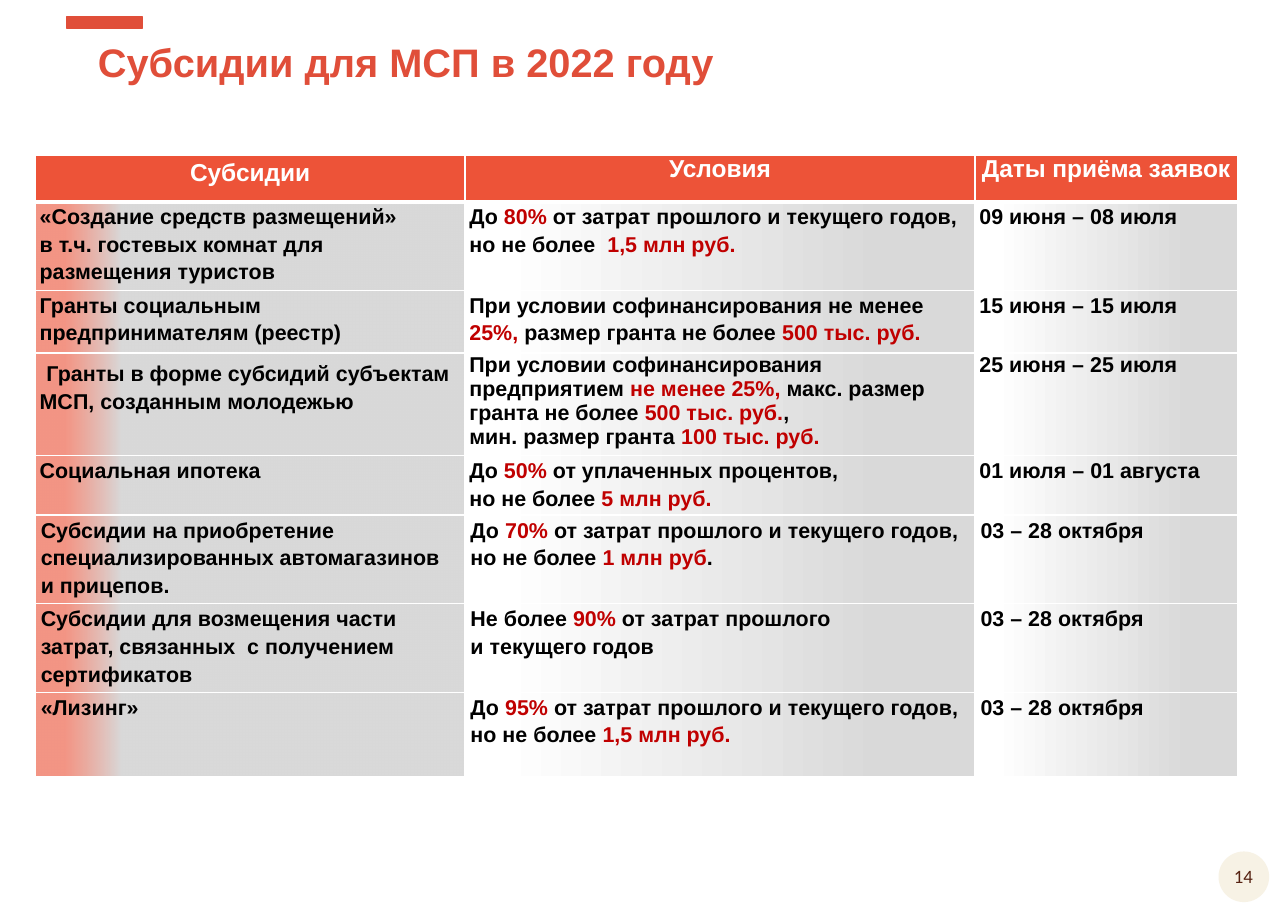
from lxml import etree
from pptx import Presentation, util as u
from pptx.dml.color import RGBColor
from pptx.enum import shapes, text
from pptx.oxml.ns import qn

ACCENT, HEADER, RED = "E04E39", "ED5338", "C00000"
BLACK, WHITE, GREY = "000000", "FFFFFF", "D9D9D9"

# Gradient stops: position in percent, colour, opacity in percent
NAME_STOPS = [(0, GREY, 100), (80, GREY, 100), (93, "F28572", 86)]
PLAIN_STOPS = [(0, GREY, 100), (18, GREY, 100), (93, WHITE, 100)]

COLUMNS = [3.9, 4.63, 2.38, 0.14]
HEADINGS = ["Субсидии", "Условия", "Даты приёма заявок"]
# Height, side margin, line spacing, cells.
# *red words*, \n is a new paragraph, \v is a line break
SUBSIDIES = [
    (0.77, 0.04, 1.15,
     ["«Создание средств размещений»\nв т.ч. гостевых комнат для размещения туристов",
      "До *80%* от затрат прошлого и текущего годов, \vно не более  *1,5 млн руб.*",
      "09 июня – 08 июля"]),
    (0.57, 0.04, 1.15,
     ["Гранты социальным предпринимателям (реестр)",
      "При условии софинансирования не менее *25%, *размер гранта не более *500 тыс. руб.*",
      "15 июня – 15 июля"]),
    (0.88, 0.04, 1.0,
     ["\u00a0Гранты в форме субсидий субъектам МСП, созданным молодежью",
      "При условии софинансирования предприятием *не менее 25%, *макс. размер гранта "
      "не более *500 тыс. руб.*, \vмин. размер гранта *100 тыс. руб.*",
      "25 июня – 25 июля"]),
    (0.49, 0.04, 1.15,
     ["Социальная ипотека",
      "До *50%* от уплаченных процентов, \vно не более *5 млн руб.*",
      "01 июля – 01 августа"]),
    (0.8, 0.05, 1.15,
     ["Субсидии на приобретение специализированных автомагазинов \vи прицепов.",
      "До *70%* от затрат прошлого и текущего годов, но не более *1 млн руб*.",
      "03 – 28 октября"]),
    (0.77, 0.05, 1.15,
     ["Субсидии для возмещения части затрат, связанных  с получением сертификатов",
      "Не более *90% *от затрат прошлого \vи текущего годов",
      "03 – 28 октября"]),
    (0.77, 0.05, 1.15,
     ["«Лизинг»",
      "До *95%* от затрат прошлого и текущего годов, но не более *1,5 млн руб.*",
      "03 – 28 октября"]),
]


def colour(value):
    return RGBColor.from_string(value)


def inches(*values):
    return [u.Inches(value) for value in values]


def add_span(para, words, size, ink, bold=True, name="Arial"):
    span = para.add_run()
    span.text = words
    for key, value in {"size": u.Pt(size), "bold": bold, "name": name}.items():
        setattr(span.font, key, value)
    span.font.color.rgb = colour(ink)


def add_marked_text(para, words, size, ink):
    if words.startswith("\u00a0"):
        add_span(para, "\u00a0", 19.8, WHITE, False, "Calibri")
        words = words[1:]
    for index, part in enumerate(words.split("*")):
        for number, line in enumerate(part.split("\v")):
            if number:
                para.add_line_break()
            if line:
                add_span(para, line, size, RED if index % 2 else ink)


def fill_cell_text(cell, words, size, ink, spacing, margin, align):
    margins = {"margin_left": margin, "margin_right": margin,
               "margin_top": 0, "margin_bottom": 0}
    for key, value in margins.items():
        setattr(cell, key, u.Inches(value))
    frame = cell.text_frame
    for index, line in enumerate(words.split("\n")):
        para = frame.add_paragraph() if index else frame.paragraphs[0]
        para.alignment, para.line_spacing = align, spacing
        add_marked_text(para, line, size, ink)


def add_child(parent, tag, **attributes):
    return etree.SubElement(parent, qn(tag), attributes)


def set_gradient(cell, stops):
    gradient = add_child(cell._tc.get_or_add_tcPr(), "a:gradFill", rotWithShape="1")
    stop_list = add_child(gradient, "a:gsLst")
    for position, value, opacity in stops:
        stop = add_child(stop_list, "a:gs", pos=str(position * 1000))
        ink = add_child(stop, "a:srgbClr", val=value)
        if opacity < 100:
            add_child(ink, "a:alpha", val=str(opacity * 1000))
    add_child(gradient, "a:lin", ang=str(180 * 60000), scaled="0")


def set_fill(cell, value):
    cell.fill.solid()
    cell.fill.fore_color.rgb = colour(value)


def set_borders(cell, top, bottom):
    properties = cell._tc.get_or_add_tcPr()
    widths = {"a:lnL": 1, "a:lnR": 1, "a:lnT": top, "a:lnB": bottom}
    for index, (tag, width) in enumerate(widths.items()):
        line = etree.Element(qn(tag), w=str(u.Pt(width)))
        add_child(add_child(line, "a:solidFill"), "a:srgbClr", val=WHITE)
        properties.insert(index, line)


def add_plain_shape(page, kind, box, fill):
    shape = page.shapes.add_shape(kind, *inches(*box))
    shape.shadow.inherit = False
    shape.fill.solid()
    shape.fill.fore_color.rgb = colour(fill)
    shape.line.fill.background()
    return shape


def add_label(page, box, words, align, spacing, **style):
    frame = page.shapes.add_textbox(*inches(*box)).text_frame
    frame.word_wrap = True
    frame.vertical_anchor = text.MSO_ANCHOR.TOP
    para = frame.paragraphs[0]
    para.alignment, para.line_spacing = align, spacing
    add_span(para, words, **style)


def add_title(page, left, top, width):
    bar = add_plain_shape(page, shapes.MSO_SHAPE.RECTANGLE, (left, top, 0.68, 0.11), ACCENT)
    bar.line.color.rgb = colour(ACCENT)
    bar.line.width = u.Pt(1)
    add_label(page, (left + 0.18, top + 0.21, width - 0.18, 0.47),
              "Субсидии для МСП в 2022 году", text.PP_ALIGN.LEFT, 0.85, size=26, ink=ACCENT)


def add_subsidy_table(page, left, top):
    heights = [0.42] + [row[0] for row in SUBSIDIES]
    box = inches(left, top, sum(COLUMNS), sum(heights))
    table = page.shapes.add_table(len(heights), len(COLUMNS), *box).table
    table.first_row = table.horz_banding = False
    for column, width in zip(table.columns, COLUMNS):
        column.width = u.Inches(width)
    for row, height in zip(table.rows, heights):
        row.height = u.Inches(height)

    # Heading row
    for index, heading in enumerate(HEADINGS):
        cell = table.cell(0, index)
        fill_cell_text(cell, heading, 16, WHITE, 1.0 if index else 1.15, 0.05,
                       text.PP_ALIGN.CENTER)
        set_fill(cell, HEADER)

    # Subsidy rows
    for number, (_, margin, spacing, cells) in enumerate(SUBSIDIES, 1):
        for index, words in enumerate(cells):
            cell = table.cell(number, index)
            fill_cell_text(cell, words, 14, BLACK, spacing, margin, text.PP_ALIGN.LEFT)
            set_gradient(cell, PLAIN_STOPS if index else NAME_STOPS)

    # White end column and borders
    last = len(COLUMNS) - 1
    for number in range(len(heights)):
        set_fill(table.cell(number, last), WHITE)
        for index in range(len(COLUMNS)):
            set_borders(table.cell(number, index), 3 if number == 1 else 1,
                        1 if number else 3)
    table.cell(0, last).merge(table.cell(len(heights) - 2, last))


def add_page_number(page, left, top, size):
    add_plain_shape(page, shapes.MSO_SHAPE.OVAL, (left, top, size, size), "F7F2E5")
    add_label(page, (left - 0.03, top + 0.07, size + 0.05, 0.3), "14",
              text.PP_ALIGN.CENTER, 1.0, size=12.3, ink="562212", bold=False, name="Calibri")


def main():
    deck = Presentation()
    deck.slide_width, deck.slide_height = inches(11.69, 8.27)
    page = deck.slides.add_slide(deck.slide_layouts[6])
    add_page_number(page, 11.06, 7.73, 0.46)
    add_subsidy_table(page, 0.32, 1.41)
    add_title(page, 0.61, 0.15, 10.49)
    deck.save("out.pptx")


if __name__ == "__main__":
    main()
